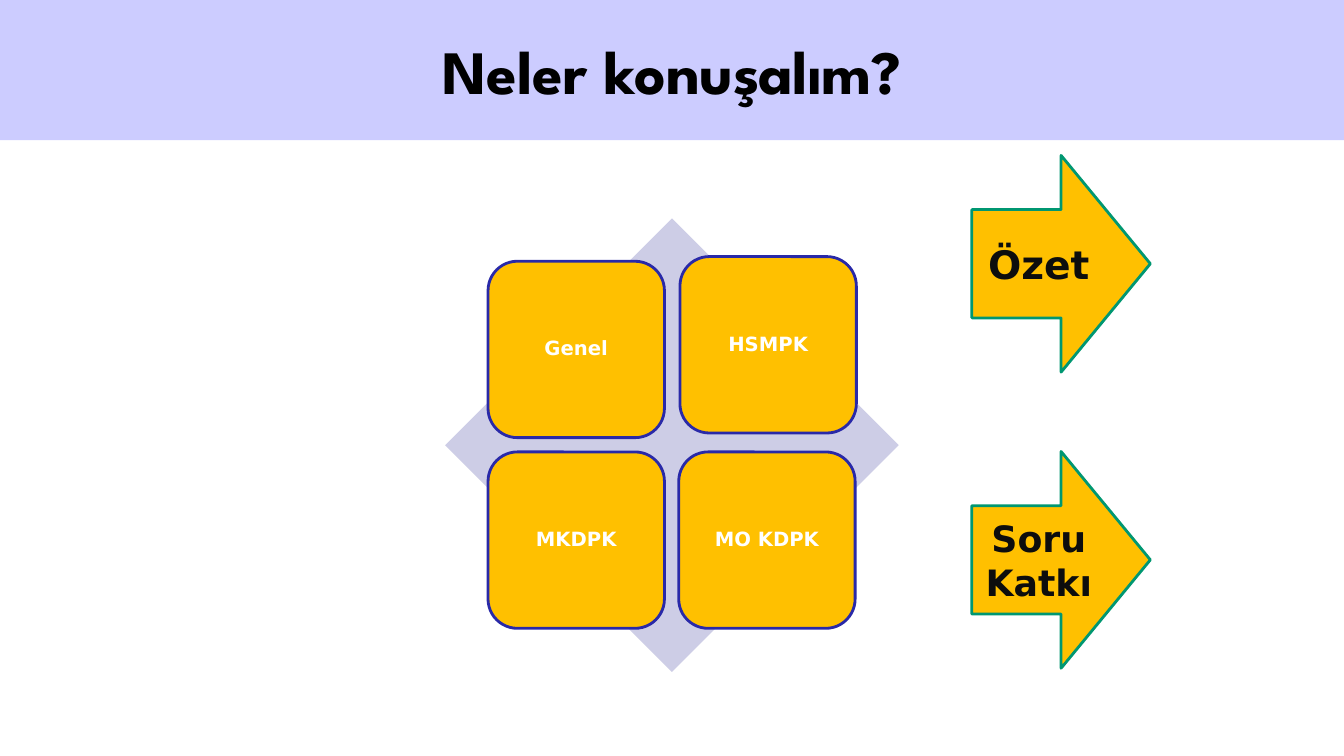
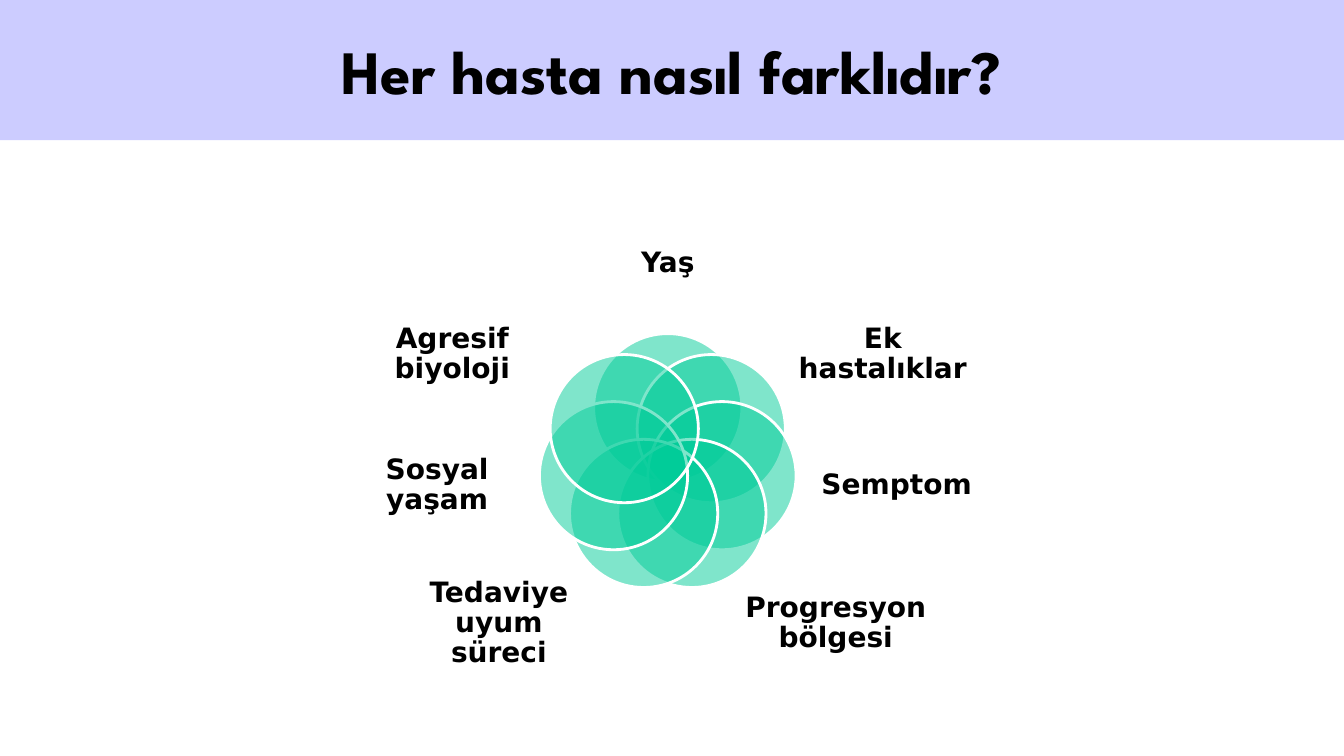
from dataclasses import dataclass
from math import cos, pi, sin

from lxml.etree import SubElement
from pptx import Presentation
from pptx.dml.color import RGBColor
from pptx.enum.shapes import MSO_SHAPE
from pptx.enum.text import MSO_ANCHOR, PP_ALIGN
from pptx.oxml.ns import qn
from pptx.presentation import Presentation as Deck
from pptx.shapes.autoshape import Shape
from pptx.slide import Slide
from pptx.util import Emu, Inches, Pt

# The slide is a grid of 160 columns by 90 rows of square cells.
COLUMNS, ROWS = 160, 90
CELL = Inches(7.5) // ROWS

BLACK = RGBColor(0x00, 0x00, 0x00)
WHITE = RGBColor(0xFF, 0xFF, 0xFF)
INK = RGBColor(0x0D, 0x0D, 0x0D)
LAVENDER = RGBColor(0xCC, 0xCC, 0xFF)
PALE_VIOLET = RGBColor(0xCD, 0xCD, 0xE6)
NAVY = RGBColor(0x29, 0x29, 0xA8)
AMBER = RGBColor(0xFF, 0xC0, 0x00)
GREEN = RGBColor(0x00, 0x97, 0x71)
MINT = RGBColor(0x00, 0xCC, 0x99)

TITLE_FONT = "League Spartan"
BODY_FONT = "DejaVu Sans"
BAND_ROWS = 16.7


@dataclass(frozen=True)
class Box:
    """A place on the grid, in columns and rows."""
    column: float
    row: float
    width: float
    height: float

    def lengths(self) -> tuple[Emu, ...]:
        return tuple(Emu(round(cells * CELL))
                     for cells in (self.column, self.row, self.width, self.height))


@dataclass(frozen=True)
class TextStyle:
    size: float
    color: RGBColor
    font: str = BODY_FONT
    line_spacing: float = 1.0
    inset: float | None = None


@dataclass(frozen=True)
class Tile:
    text: str
    column: float
    row: float


@dataclass(frozen=True)
class Arrow:
    text: str
    row: float
    size: float


@dataclass(frozen=True)
class Petal:
    label: str
    label_box: Box


TITLE_STYLE = TextStyle(44, BLACK, TITLE_FONT)
TILE_STYLE = TextStyle(14, WHITE, line_spacing=0.9, inset=0.06)
LABEL_STYLE = TextStyle(20, BLACK, line_spacing=0.9, inset=0)

DIAMOND = Box(53, 26, 54, 54)
TILE_SIDE = 21
TILES = (
    Tile("Genel", 58.1, 31.1),
    Tile("HSMPK", 80.95, 30.55),
    Tile("MKDPK", 58.1, 53.8),
    Tile("MO KDPK", 80.8, 53.8),
)

ARROW_COLUMN, ARROW_WIDTH, ARROW_HEIGHT = 115.7, 21.25, 25.8
ARROWS = (Arrow("Özet", 18.5, 28), Arrow("Soru Katkı", 53.75, 25.9))

RING_COLUMN, RING_ROW, RING_RADIUS = 79.5, 55.16, 6.62
PETAL_DIAMETER = 17.64
# Clockwise from the top of the ring.
PETALS = (
    Petal("Yaş", Box(69.4, 26, 20.2, 10.8)),
    Petal("Ek hastalıklar", Box(93, 36.2, 24.2, 11.9)),
    Petal("Semptom", Box(97.4, 51.4, 18.7, 12.7)),
    Petal("Progresyon bölgesi", Box(86.4, 68.4, 26.2, 11.6)),
    Petal("Tedaviye uyum süreci", Box(49.3, 68.4, 20.2, 11.6)),
    Petal("Sosyal yaşam", Box(42.7, 51.4, 18.7, 12.7)),
    Petal("Agresif biyoloji", Box(44.3, 36.2, 19.1, 11.9)),
)


def write(shape: Shape, text: str, style: TextStyle) -> None:
    frame = shape.text_frame
    frame.word_wrap = True
    frame.vertical_anchor = MSO_ANCHOR.MIDDLE
    if style.inset is not None:
        inset = Inches(style.inset)
        frame.margin_left = frame.margin_right = inset
        frame.margin_top = frame.margin_bottom = inset
    paragraph = frame.paragraphs[0]
    paragraph.alignment = PP_ALIGN.CENTER
    paragraph.line_spacing = style.line_spacing
    run = paragraph.add_run()
    run.text = text
    run.font.size = Pt(style.size)
    run.font.name = style.font
    run.font.bold = True
    run.font.color.rgb = style.color


def add_figure(slide: Slide, kind: MSO_SHAPE, box: Box, fill: RGBColor,
               line: RGBColor | None = None) -> Shape:
    figure = slide.shapes.add_shape(kind, *box.lengths())
    figure.shadow.inherit = False
    figure.fill.solid()
    figure.fill.fore_color.rgb = fill
    if line is None:
        figure.line.fill.background()
    else:
        figure.line.color.rgb = line
        figure.line.width = Pt(2)
    return figure


def set_opacity(figure: Shape, percent: int) -> None:
    color = figure.fill._xPr.find(qn("a:solidFill"))[0]
    SubElement(color, qn("a:alpha")).set("val", str(percent * 1000))


def add_titled_slide(deck: Deck, title: str) -> Slide:
    slide = deck.slides.add_slide(deck.slide_layouts[6])
    band = add_figure(slide, MSO_SHAPE.RECTANGLE,
                      Box(0, 0, COLUMNS, BAND_ROWS), LAVENDER)
    write(band, title, TITLE_STYLE)
    return slide


def add_topics(slide: Slide) -> None:
    add_figure(slide, MSO_SHAPE.DIAMOND, DIAMOND, PALE_VIOLET)
    for tile in TILES:
        box = Box(tile.column, tile.row, TILE_SIDE, TILE_SIDE)
        square = add_figure(slide, MSO_SHAPE.ROUNDED_RECTANGLE, box, AMBER, NAVY)
        write(square, tile.text, TILE_STYLE)
    for arrow in ARROWS:
        box = Box(ARROW_COLUMN, arrow.row, ARROW_WIDTH, ARROW_HEIGHT)
        pointer = add_figure(slide, MSO_SHAPE.RIGHT_ARROW, box, AMBER, GREEN)
        write(pointer, arrow.text, TextStyle(arrow.size, INK))


def add_flower(slide: Slide) -> None:
    """Overlapping circles evenly spaced on a ring, each with its label."""
    for index, petal in enumerate(PETALS):
        angle = 2 * pi * index / len(PETALS)
        box = Box(RING_COLUMN + RING_RADIUS * sin(angle) - PETAL_DIAMETER / 2,
                  RING_ROW - RING_RADIUS * cos(angle) - PETAL_DIAMETER / 2,
                  PETAL_DIAMETER, PETAL_DIAMETER)
        circle = add_figure(slide, MSO_SHAPE.OVAL, box, MINT, WHITE)
        set_opacity(circle, 50)
        label = slide.shapes.add_textbox(*petal.label_box.lengths())
        write(label, petal.label, LABEL_STYLE)


def main() -> None:
    deck = Presentation()
    deck.slide_width = Emu(COLUMNS * CELL)
    deck.slide_height = Emu(ROWS * CELL)
    add_topics(add_titled_slide(deck, "Neler konuşalım?"))
    add_flower(add_titled_slide(deck, "Her hasta nasıl farklıdır?"))
    deck.save("out.pptx")


if __name__ == "__main__":
    main()
